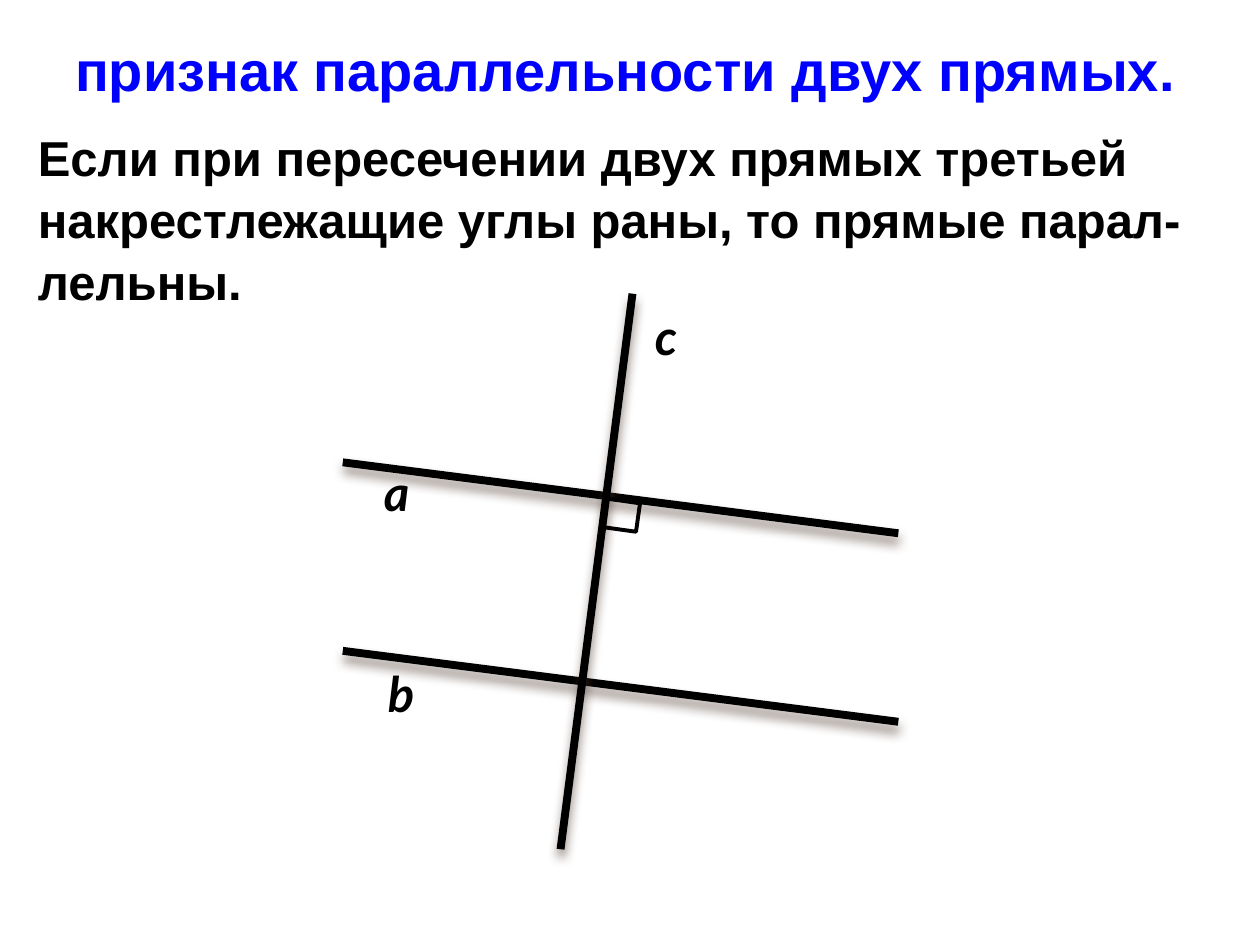
from lxml import etree
from pptx import Presentation
from pptx import util as u
from pptx.dml.color import RGBColor
from pptx.enum import shapes, text
from pptx.oxml.ns import qn

BLACK = RGBColor(0x00, 0x00, 0x00)
BLUE = RGBColor(0x00, 0x00, 0xFF)
SHADOW = RGBColor(0x4E, 0x3B, 0x30)

TITLE = "признак параллельности двух прямых."
STATEMENT = [
    "Если при пересечении двух прямых третьей",
    "накрестлежащие углы раны, то прямые парал-",
    "лельны.",
]


def add_solid_fill(parent, color):
    fill = etree.SubElement(parent, qn("a:solidFill"))
    return etree.SubElement(fill, qn("a:srgbClr"), val=str(color))


def format_run(run, font_name, size, color, italic=None):
    font = run.font
    font.name = font_name
    font.size = u.Pt(size)
    font.bold = True
    font.italic = italic
    font.color.rgb = color


def outline_run(run, color):
    outline = etree.Element(qn("a:ln"), w=str(u.Pt(0.9)))
    add_solid_fill(outline, color)
    run.font._element.insert(0, outline)


def fill_placeholder(placeholder, box, lines, size, color, alignment):
    placeholder.left, placeholder.top, placeholder.width, placeholder.height = box
    frame = placeholder.text_frame
    frame.text = "\n".join(lines)
    frame.word_wrap = True
    frame.auto_size = text.MSO_AUTO_SIZE.NONE
    frame.vertical_anchor = text.MSO_ANCHOR.TOP
    for paragraph in frame.paragraphs:
        paragraph.alignment = alignment
        paragraph.line_spacing = 1.05
        paragraph.space_before = u.Pt(0)
        properties = paragraph._p.get_or_add_pPr()
        properties.set("marL", "0")
        properties.set("indent", "0")
        etree.SubElement(properties, qn("a:buNone"))
        for run in paragraph.runs:
            format_run(run, "Arial", size, color)
            outline_run(run, color)


def add_thick_line(slide, start, end):
    line = slide.shapes.add_connector(shapes.MSO_CONNECTOR.STRAIGHT, *start, *end)
    line.line.color.rgb = BLACK
    line.line.width = u.Pt(4.5)
    effects = etree.SubElement(line._element.spPr, qn("a:effectLst"))
    shadow = etree.SubElement(
        effects, qn("a:outerShdw"), blurRad=str(u.Pt(6)), dist=str(u.Pt(4)),
        dir="5400000", rotWithShape="0")
    shadow_color = add_solid_fill(effects, SHADOW)
    effects.remove(shadow_color.getparent())
    shadow.append(shadow_color)
    etree.SubElement(shadow_color, qn("a:alpha"), val="60000")


def add_label(slide, left, top, letter):
    label = slide.shapes.add_textbox(left, top, u.Cm(1.04), u.Cm(1.45))
    frame = label.text_frame
    frame.text = letter
    frame.word_wrap = False
    frame.auto_size = text.MSO_AUTO_SIZE.SHAPE_TO_FIT_TEXT
    format_run(frame.paragraphs[0].runs[0], "Lato", 28, BLACK, italic=True)


def add_right_angle(slide, left, top):
    mark = slide.shapes.add_shape(
        shapes.MSO_SHAPE.RECTANGLE, left, top, u.Cm(0.58), u.Cm(0.71))
    mark.rotation = 98
    mark.fill.background()
    mark.line.color.rgb = BLACK
    mark.line.width = u.Pt(2.25)
    mark.shadow.inherit = False


def draw_diagram(slide, left, top, width, height):
    parallels = [("a", 3.4, 0.58, 3.28), ("b", 7.2, 0.66, 7.34)]
    for letter, line_top, label_left, label_top in parallels:
        start = (left, top + u.Cm(line_top))
        end = (left + width, top + u.Cm(line_top + 1.43))
        add_thick_line(slide, start, end)
        add_label(slide, left + u.Cm(label_left), top + u.Cm(label_top), letter)
    add_thick_line(slide, (left + u.Cm(4.39), top + height), (left + u.Cm(5.84), top))
    add_label(slide, left + u.Cm(6.04), top + u.Cm(0.13), "c")
    add_right_angle(slide, left + u.Cm(5.31), top + u.Cm(4.11))


def main():
    presentation = Presentation()
    presentation.slide_width = u.Cm(25.4)
    presentation.slide_height = u.Cm(19.05)
    slide = presentation.slides.add_slide(presentation.slide_layouts[1])
    left, width = u.Cm(0.51), u.Cm(24.2)
    fill_placeholder(
        slide.shapes.title, (left, u.Cm(0.53), width, u.Cm(1.98)),
        [TITLE], 32, BLUE, text.PP_ALIGN.CENTER)
    fill_placeholder(
        slide.placeholders[1], (left, u.Cm(2.39), width, u.Cm(4.14)),
        STATEMENT, 28, BLACK, text.PP_ALIGN.JUSTIFY)
    draw_diagram(slide, u.Cm(6.91), u.Cm(5.92), u.Cm(11.2), u.Cm(11.2))
    presentation.save("out.pptx")


if __name__ == "__main__":
    main()
